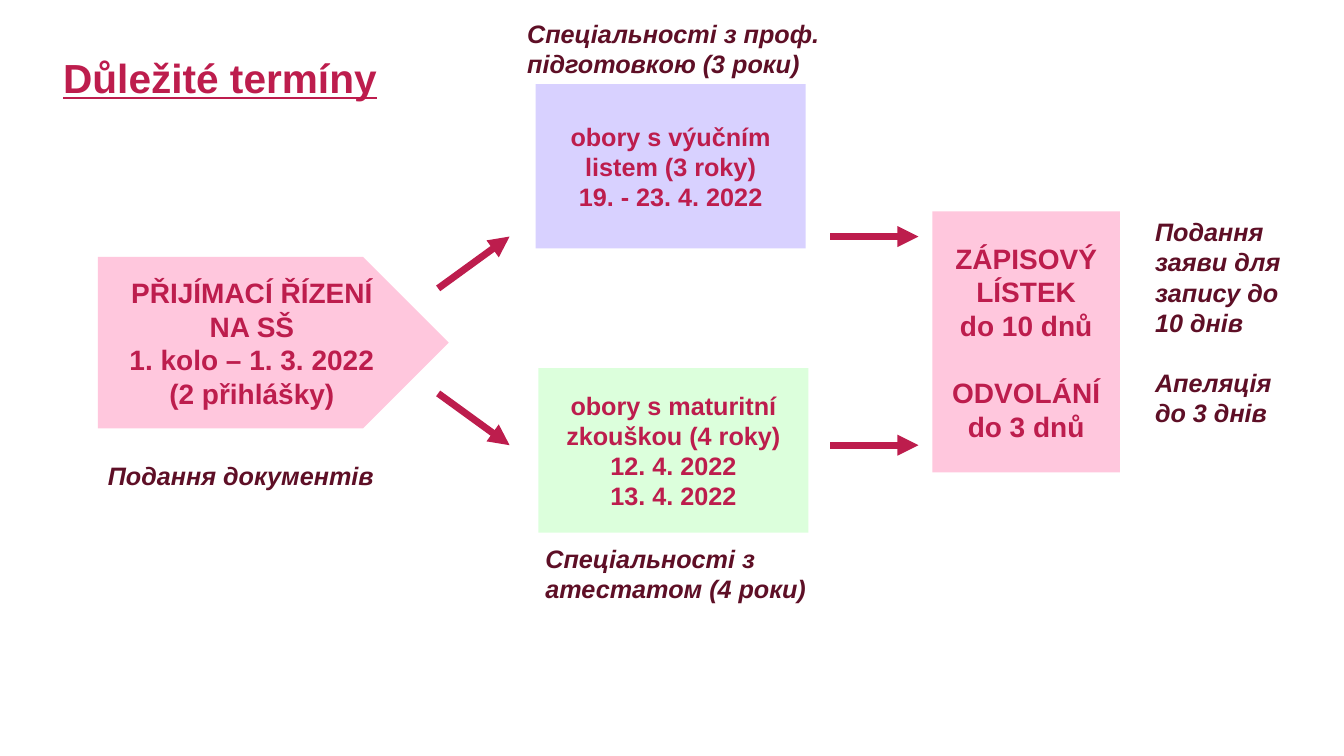
"""Build a slide that charts the key dates of secondary school admissions."""
from dataclasses import dataclass
from typing import NamedTuple

from lxml.etree import SubElement
from pptx import Presentation
from pptx.dml.color import RGBColor
from pptx.enum.shapes import MSO_CONNECTOR, MSO_SHAPE
from pptx.enum.text import MSO_ANCHOR, PP_ALIGN
from pptx.oxml.ns import qn
from pptx.util import Pt


@dataclass(frozen=True)
class Theme:
    """Hold the colours, font and sizes of the slide."""
    font: str = "Arial"
    accent: str = "BD1D4D"
    caption: str = "5E0F26"
    pink: str = "FFC7DD"
    violet: str = "D8D1FF"
    green: str = "DCFFDC"
    title_size: float = 29
    stage_size: float = 20
    body_size: float = 18
    arrow_width: float = 5


class Box(NamedTuple):
    """Hold a rectangle in points."""
    left: float
    top: float
    width: float
    height: float

    def inner(self, left, top, width, height):
        """Return a rectangle placed relative to this one."""
        return Box(self.left + left, self.top + top, width, height)

    def lengths(self):
        """Return the four sides as slide lengths."""
        return [Pt(value) for value in self]


THEME = Theme()


def write_text(shape, lines, size=THEME.body_size, color=THEME.accent, italic=False,
               underline=False, align=PP_ALIGN.LEFT, anchor=MSO_ANCHOR.TOP,
               wrap=True, gap_line=None, gap=0):
    """Write one bold paragraph per line, with a gap above the chosen line."""
    frame = shape.text_frame
    frame.word_wrap = wrap
    frame.vertical_anchor = anchor
    for index, line in enumerate(lines):
        paragraph = frame.paragraphs[0] if index == 0 else frame.add_paragraph()
        paragraph.alignment = align
        if index == gap_line:
            paragraph.space_before = Pt(gap)
        run = paragraph.add_run()
        run.text = line
        font = run.font
        font.name, font.size = THEME.font, Pt(size)
        font.bold, font.italic, font.underline = True, italic, underline
        font.color.rgb = RGBColor.from_string(color)


def add_panel(slide, box, fill, lines, kind=MSO_SHAPE.RECTANGLE, **text_format):
    """Add a filled shape with centred text."""
    shape = slide.shapes.add_shape(kind, *box.lengths())
    shape.shadow.inherit = False
    shape.fill.solid()
    shape.fill.fore_color.rgb = RGBColor.from_string(fill)
    shape.line.fill.background()
    write_text(shape, lines, align=PP_ALIGN.CENTER, anchor=MSO_ANCHOR.MIDDLE, **text_format)


def add_label(slide, box, lines, **text_format):
    """Add a text box."""
    write_text(slide.shapes.add_textbox(*box.lengths()), lines, **text_format)


def add_caption(slide, box, lines, **text_format):
    """Add a dark italic translation."""
    add_label(slide, box, lines, color=THEME.caption, italic=True, **text_format)


def add_arrow(slide, box):
    """Add an arrow from the start of the box across its width and height."""
    left, top, width, height = box
    arrow = slide.shapes.add_connector(
        MSO_CONNECTOR.STRAIGHT, Pt(left), Pt(top), Pt(left + width), Pt(top + height))
    arrow.line.color.rgb = RGBColor.from_string(THEME.accent)
    arrow.line.width = Pt(THEME.arrow_width)
    SubElement(arrow.line._get_or_add_ln(), qn("a:tailEnd"), type="triangle")
    SubElement(arrow._element.spPr, qn("a:effectLst"))


def add_arrows(slide, box):
    """Add the upper and lower arrows into and out of the study programmes."""
    for row, rise in ((0, -37), (box.height, 37)):
        add_arrow(slide, box.inner(0, row - rise, 51, rise))
        add_arrow(slide, box.inner(280, row, 63, 0))


def add_application(slide, box):
    """Add the application stage and its caption."""
    add_panel(slide, box.inner(0, 0, 250.5, 122.5), THEME.pink,
              ["PŘIJÍMACÍ ŘÍZENÍ NA SŠ", "1. kolo – 1. 3. 2022", "(2 přihlášky)"],
              kind=MSO_SHAPE.PENTAGON, size=THEME.stage_size)
    add_caption(slide, box.inner(0, 142, 206.5, 29), ["Подання документів"], wrap=False)


def add_programmes(slide, box):
    """Add the two study programmes with their captions."""
    add_panel(slide, box.inner(13, 50.5, 193, 117.5), THEME.violet,
              ["obory s výučním listem (3 roky)", "19. - 23. 4. 2022"])
    add_panel(slide, box.inner(15, 253.5, 193, 117.5), THEME.green,
              ["obory s maturitní zkouškou (4 roky)", "12. 4. 2022", "13. 4. 2022"])
    add_caption(slide, box.inner(0, 0, 266.5, 51),
                ["Спеціальності з проф. підготовкою (3 роки)"])
    add_caption(slide, box.inner(13, 375, 222, 51),
                ["Спеціальності з атестатом (4 роки)"])


def add_enrolment(slide, box):
    """Add the enrolment and appeal deadlines with their caption."""
    add_panel(slide, box.inner(0, 0, 134, 186.5), THEME.pink,
              ["ZÁPISOVÝ LÍSTEK", "do 10 dnů", "ODVOLÁNÍ", "do 3 dnů"],
              size=THEME.stage_size, gap_line=2, gap=24)
    add_caption(slide, box.inner(152, 0, 121.5, 160),
                ["Подання заяви для запису до 10 днів", "Апеляція до 3 днів"],
                gap_line=1, gap=21.6)


def main():
    """Build and save the presentation."""
    presentation = Presentation()
    presentation.slide_width, presentation.slide_height = Pt(960), Pt(540)
    slide = presentation.slides.add_slide(presentation.slide_layouts[6])
    add_arrows(slide, Box(313, 169, 343, 149))
    add_programmes(slide, Box(369.5, 9.5, 266.5, 426))
    add_application(slide, Box(70, 183.5, 250.5, 171))
    add_enrolment(slide, Box(666, 151, 273.5, 186.5))
    add_label(slide, Box(38, 34.5, 263.5, 78), ["Důležité termíny"],
              size=THEME.title_size, underline=True)
    presentation.save("out.pptx")


if __name__ == "__main__":
    main()
